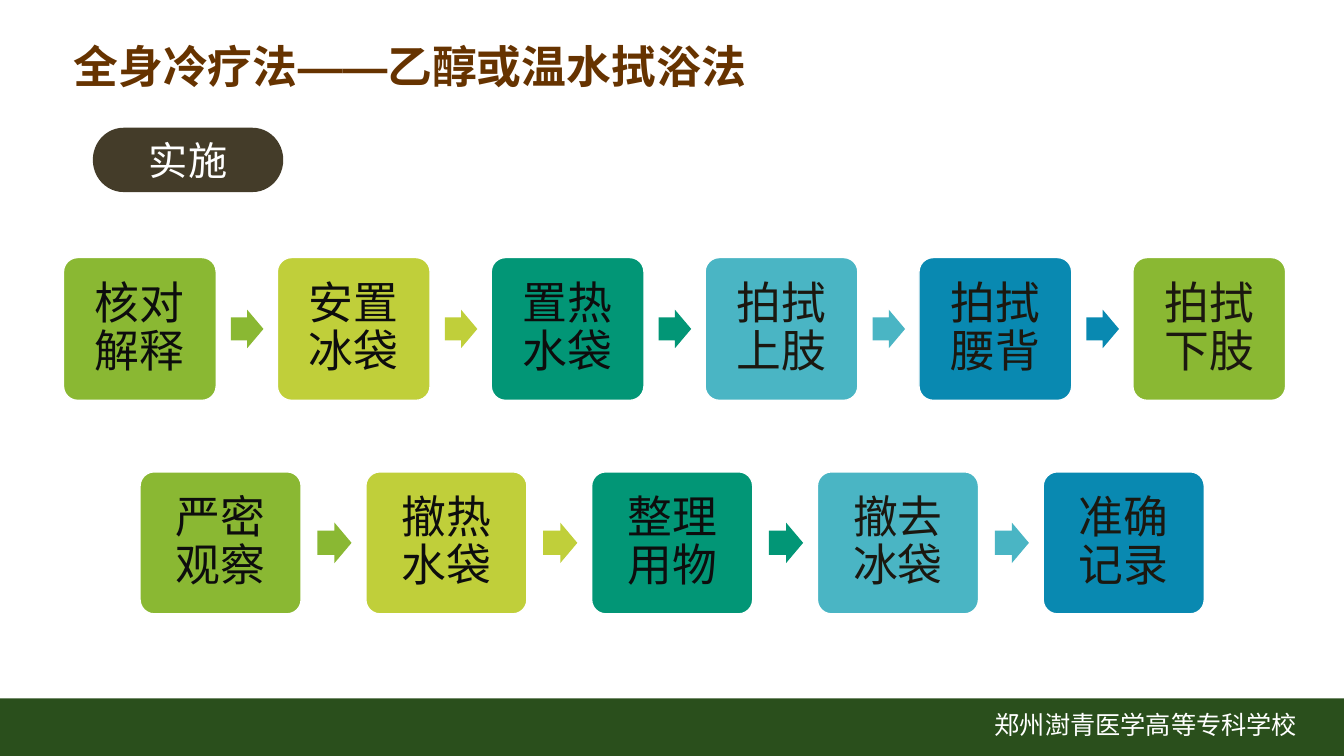
from lxml.etree import SubElement
from pptx import Presentation
from pptx.dml.color import RGBColor
from pptx.enum.lang import MSO_LANGUAGE_ID
from pptx.enum.shapes import MSO_SHAPE
from pptx.enum.text import MSO_ANCHOR, MSO_AUTO_SIZE, PP_ALIGN
from pptx.oxml.ns import qn
from pptx.util import Cm, Pt

WHITE = RGBColor(0xFF, 0xFF, 0xFF)
BROWN = RGBColor(0x66, 0x33, 0x00)
UMBER = RGBColor(0x44, 0x3C, 0x29)
FOREST = RGBColor(0x2A, 0x4F, 0x1C)
BLACK = RGBColor(0x0D, 0x0D, 0x0D)
DARK = RGBColor(0x1B, 0x18, 0x10)
STEP_FILLS = [
    RGBColor(0x8A, 0xB8, 0x33),
    RGBColor(0xC0, 0xCF, 0x3A),
    RGBColor(0x02, 0x96, 0x76),
    RGBColor(0x4A, 0xB5, 0xC4),
    RGBColor(0x09, 0x89, 0xB1),
]
STEP_INKS = [BLACK, BLACK, BLACK, DARK, DARK, DARK]


def write(frame, text, size=32, color=BLACK, typeface="Arial", bold=False,
          align=PP_ALIGN.LEFT, anchor=MSO_ANCHOR.TOP, inset=None, spacing=None):
    frame.word_wrap = True
    frame.vertical_anchor = anchor
    if inset is not None:
        frame.margin_left = frame.margin_right = inset
        frame.margin_top = frame.margin_bottom = inset
    paragraph = frame.paragraphs[0]
    paragraph.alignment = align
    if spacing:
        paragraph.line_spacing = spacing
    run = paragraph.add_run()
    run.text = text
    font = run.font
    font.size, font.bold, font.name = Pt(size), bold, typeface
    font.color.rgb = color
    font.language_id = MSO_LANGUAGE_ID.SIMPLIFIED_CHINESE
    # Chinese glyphs take the East Asian typeface
    SubElement(run._r.get_or_add_rPr(), qn("a:ea"), typeface=typeface)


class ProcedureSlide:
    def __init__(self, deck):
        self.slide = deck.slides.add_slide(deck.slide_layouts[5])
        self.shapes = self.slide.shapes

    def title(self, text, left, top, width, height):
        heading = self.shapes.title
        heading.left, heading.top = Cm(left), Cm(top)
        heading.width, heading.height = Cm(width), Cm(height)
        write(heading.text_frame, text, color=BROWN, bold=True)
        heading.text_frame.auto_size = MSO_AUTO_SIZE.SHAPE_TO_FIT_TEXT

    def block(self, preset, left, top, width, height, fill, adjust=(), outline=None):
        block = self.shapes.add_shape(preset, Cm(left), Cm(top), Cm(width), Cm(height))
        block.shadow.inherit = False
        block.fill.solid()
        block.fill.fore_color.rgb = fill
        for index, value in enumerate(adjust):
            block.adjustments[index] = value
        if outline is None:
            block.line.fill.background()
        else:
            block.line.color.rgb = outline
            block.line.width = Pt(1)
        return block

    def label(self, text, left, top, width, height, **style):
        label = self.shapes.add_textbox(Cm(left), Cm(top), Cm(width), Cm(height))
        write(label.text_frame, text, **style)

    def flow(self, steps, left, top, pitch, step_size, arrow_offset, arrow_size):
        """Draw a row of equally spaced steps with an arrow between neighbours."""
        step_width, step_height = step_size
        arrow_width, arrow_height = arrow_size
        arrow_top = top + (step_height - arrow_height) / 2
        for index, step in enumerate(steps):
            x = left + index * pitch
            fill = STEP_FILLS[index % len(STEP_FILLS)]
            card = self.block(MSO_SHAPE.ROUNDED_RECTANGLE, x, top, step_width,
                              step_height, fill, adjust=[0.1], outline=WHITE)
            write(card.text_frame, step, color=STEP_INKS[index],
                  align=PP_ALIGN.CENTER, anchor=MSO_ANCHOR.MIDDLE,
                  inset=Cm(0.33), spacing=0.9)
            if index < len(steps) - 1:
                self.block(MSO_SHAPE.RIGHT_ARROW, x + arrow_offset, arrow_top,
                           arrow_width, arrow_height, fill, adjust=[0.6, 0.5])


def main():
    deck = Presentation()
    deck.slide_width, deck.slide_height = Cm(33.87), Cm(19.05)
    page = ProcedureSlide(deck)

    page.block(MSO_SHAPE.RECTANGLE, 0, 17.6, 33.87, 1.45, FOREST)
    page.label("郑州澍青医学高等专科学校", 24.82, 17.75, 8.2, 1.3,
               size=18, color=WHITE, typeface="Noto Sans CJK SC")
    page.title("全身冷疗法——乙醇或温水拭浴法", 1.6, 0.86, 21.59, 1.63)

    stage = page.block(MSO_SHAPE.FLOWCHART_TERMINATOR, 2.34, 3.22, 4.8, 1.62, UMBER)
    write(stage.text_frame, "实施", size=28, color=WHITE,
          align=PP_ALIGN.CENTER, anchor=MSO_ANCHOR.MIDDLE)

    page.flow(["核对解释", "安置冰袋", "置热水袋", "拍拭上肢", "拍拭腰背", "拍拭下肢"],
              left=1.6, top=6.49, pitch=5.39, step_size=(3.85, 3.6),
              arrow_offset=4.22, arrow_size=(0.82, 0.97))
    page.flow(["严密观察", "撤热水袋", "整理用物", "撤去冰袋", "准确记录"],
              left=3.53, top=11.89, pitch=5.69, step_size=(4.06, 3.58),
              arrow_offset=4.47, arrow_size=(0.86, 1.02))
    deck.save("out.pptx")


if __name__ == "__main__":
    main()
